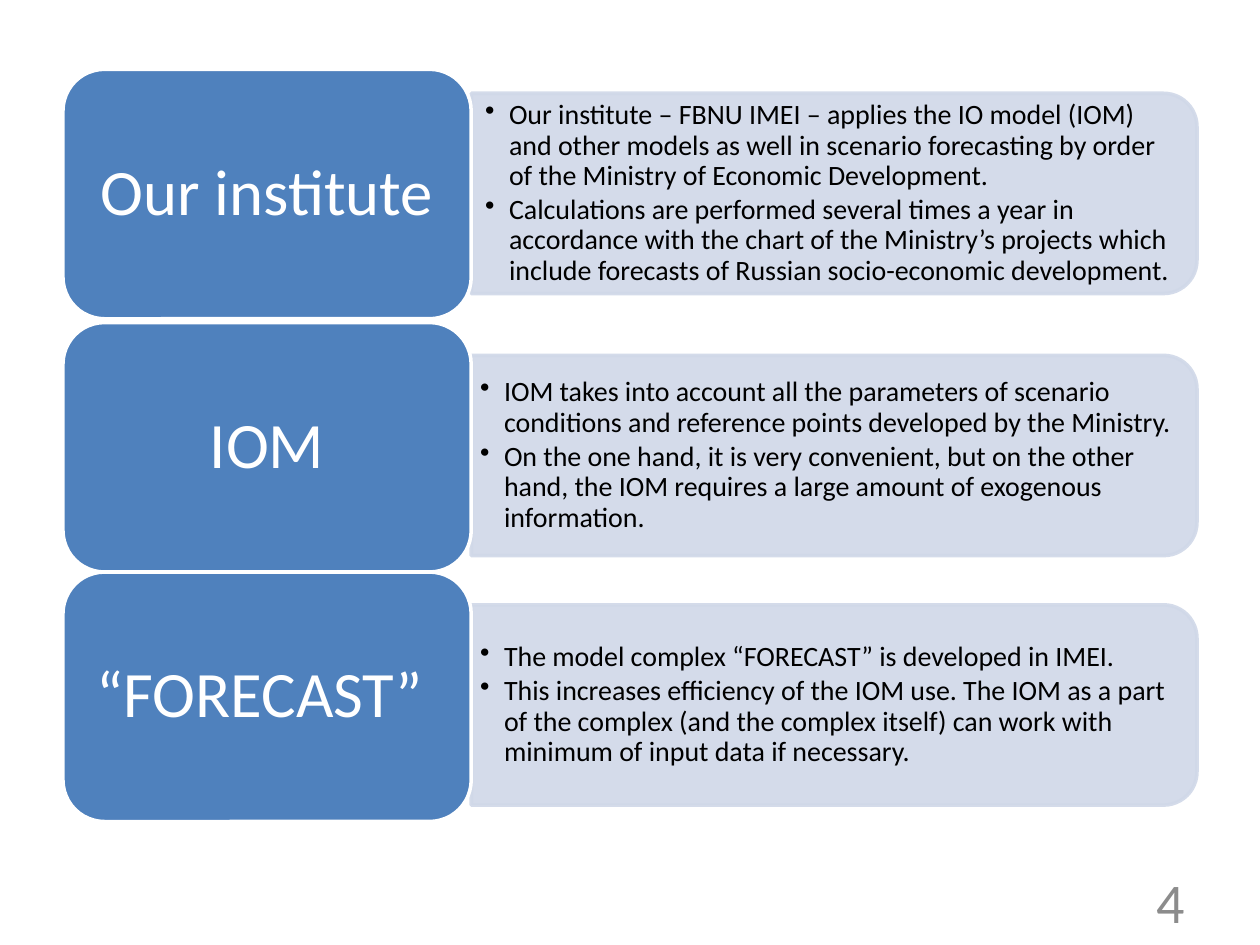
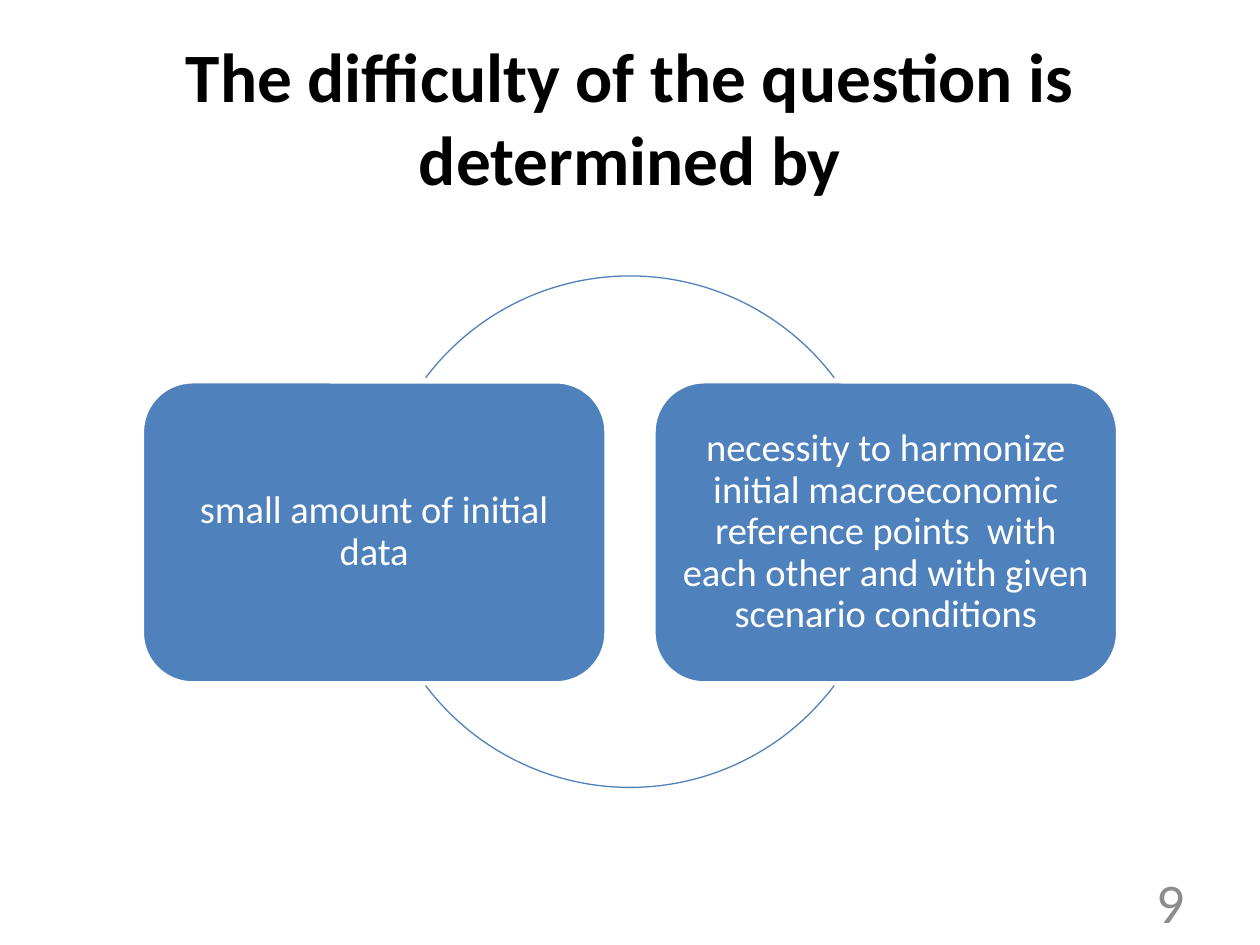
from dataclasses import dataclass

from lxml.etree import SubElement
from pptx import Presentation
from pptx.dml.color import RGBColor as Rgb
from pptx.enum.shapes import MSO_SHAPE as Shape
from pptx.enum.text import MSO_ANCHOR as Anchor, PP_ALIGN as Align
from pptx.oxml.ns import qn
from pptx.util import Pt

EMU_PER_PX = 9144
BLANK, TITLE_ONLY = 6, 5


@dataclass(frozen=True)
class Theme:
    font: str = "Calibri"
    accent: str = "4F81BD"
    panel: str = "D0D8E8"
    light: str = "FFFFFF"
    dark: str = "000000"
    muted: str = "8C8C8C"
    panel_alpha: int = 90
    title_size: float = 39.6
    number_size: int = 32
    label_size: int = 37
    reason_size: int = 22
    bullet_size: int = 16
    line_spacing: float = 0.9
    border: int = 2
    arc_width: float = 0.75


def px(length):
    return round(length * EMU_PER_PX)


class Deck:
    def __init__(self, theme):
        self.theme = theme
        self.prs = Presentation()
        self.prs.slide_width, self.prs.slide_height = px(1000), px(750)
        self.slide = None

    def new_slide(self, layout, number):
        self.slide = self.prs.slides.add_slide(self.prs.slide_layouts[layout])
        frame = self.text_box((717, 695, 233, 40), (10, 5))
        self.add_text(frame.paragraphs[0], number, self.theme.number_size,
                      self.theme.muted, Align.RIGHT)

    def add_text(self, paragraph, text, size, color, align, bold=False):
        paragraph.alignment = align
        run = paragraph.add_run()
        run.text = text
        run.font.name = self.theme.font
        run.font.size = Pt(size)
        run.font.bold = bold
        run.font.color.rgb = Rgb.from_string(color)

    def set_frame(self, frame, insets):
        frame.word_wrap = True
        frame.vertical_anchor = Anchor.MIDDLE
        frame.margin_left = frame.margin_right = px(insets[0])
        frame.margin_top = frame.margin_bottom = px(insets[1])

    def text_box(self, box, insets):
        frame = self.slide.shapes.add_textbox(*map(px, box)).text_frame
        self.set_frame(frame, insets)
        return frame

    def title(self, text):
        heading = self.slide.shapes.title
        heading.left, heading.top, heading.width, heading.height = map(px, (50, 30, 900, 125))
        self.set_frame(heading.text_frame, (10, 5))
        self.add_text(heading.text_frame.paragraphs[0], text, self.theme.title_size,
                      self.theme.dark, Align.CENTER, bold=True)

    def outline(self, kind, box, color, width):
        shape = self.slide.shapes.add_shape(kind, *map(px, box))
        shape.shadow.inherit = False
        shape.line.color.rgb = Rgb.from_string(color)
        shape.line.width = Pt(width)
        return shape

    def card(self, box, text, size, insets):
        card = self.outline(Shape.ROUNDED_RECTANGLE, box, self.theme.light, self.theme.border)
        card.fill.solid()
        card.fill.fore_color.rgb = Rgb.from_string(self.theme.accent)
        self.set_frame(card.text_frame, insets)
        paragraph = card.text_frame.paragraphs[0]
        paragraph.line_spacing = self.theme.line_spacing
        self.add_text(paragraph, text, size, self.theme.light, Align.CENTER)

    def panel(self, box):
        left, top, width, height = box
        shift = (width - height) / 2
        panel = self.outline(Shape.ROUND_2_SAME_RECTANGLE,
                             (left + shift, top - shift, height, width),
                             self.theme.panel, self.theme.border)
        panel.rotation = 90
        panel.fill.solid()
        panel.fill.fore_color.rgb = Rgb.from_string(self.theme.panel)
        for color in panel._element.spPr.iter(qn("a:srgbClr")):
            SubElement(color, qn("a:alpha"), val=str(self.theme.panel_alpha * 1000))

    def bullets(self, box, items, insets):
        frame = self.text_box(box, insets)
        for index, item in enumerate(items):
            paragraph = frame.add_paragraph() if index else frame.paragraphs[0]
            paragraph.line_spacing = self.theme.line_spacing
            paragraph.space_after = Pt(self.theme.bullet_size * 0.15)
            self.add_text(paragraph, item, self.theme.bullet_size, self.theme.dark, Align.LEFT)
            properties = paragraph._p.get_or_add_pPr()
            properties.set("marL", str(px(19)))
            properties.set("indent", str(px(-19)))
            SubElement(properties, qn("a:buChar"), char="•")

    def arc(self, box, start, end):
        arc = self.outline(Shape.ARC, box, self.theme.accent, self.theme.arc_width)
        arc.fill.background()
        for index, degrees in enumerate((start, end)):
            arc.adjustments[index] = degrees * 60000 / 100000


def institute_slide(deck):
    deck.new_slide(BLANK, "4")
    topics = [
        (55, 74, (11, 6), "Our institute ", [
            "Our institute – FBNU IMEI – applies the IO model (IOM) and other models as well "
            "in scenario forecasting by order of the Ministry of Economic Development.",
            "Calculations are performed several times a year in accordance with the chart of "
            "the Ministry’s projects which include forecasts of Russian socio-economic "
            "development."]),
        (256, 282, (7, 3), "IOM", [
            "IOM takes into account all the parameters of scenario conditions and reference "
            "points developed by the Ministry.",
            "On the one hand, it is very convenient, but on the other hand, the IOM requires "
            "a large amount of exogenous information."]),
        (454, 480, (7, 3), "“FORECAST” ", [
            "The model complex “FORECAST” is developed in IMEI.",
            "This increases efficiency of the IOM use. The IOM as a part of the complex (and "
            "the complex itself) can work with minimum of input data if necessary."]),
    ]
    for label_top, panel_top, insets, label, points in topics:
        deck.panel((374, panel_top, 576, 159))
        deck.bullets((374, panel_top + 8, 568, 143), points, insets)
        deck.card((50, label_top, 324, 198), label, deck.theme.label_size, (15, 8))


def difficulty_slide(deck):
    deck.new_slide(TITLE_ONLY, "9")
    deck.title("The difficulty of the question is determined by")
    reasons = [
        "small amount of initial data",
        "necessity to harmonize initial macroeconomic reference points  with each other "
        "and with given scenario conditions",
    ]
    for index, reason in enumerate(reasons):
        deck.card((113 + index * 406, 303, 368, 239), reason, deck.theme.reason_size, (9, 9))
    for start, end in ((217, 323), (37, 143)):
        deck.arc((297, 219, 406, 406), start, end)


def main():
    deck = Deck(Theme())
    institute_slide(deck)
    difficulty_slide(deck)
    deck.prs.save("out.pptx")


if __name__ == "__main__":
    main()
